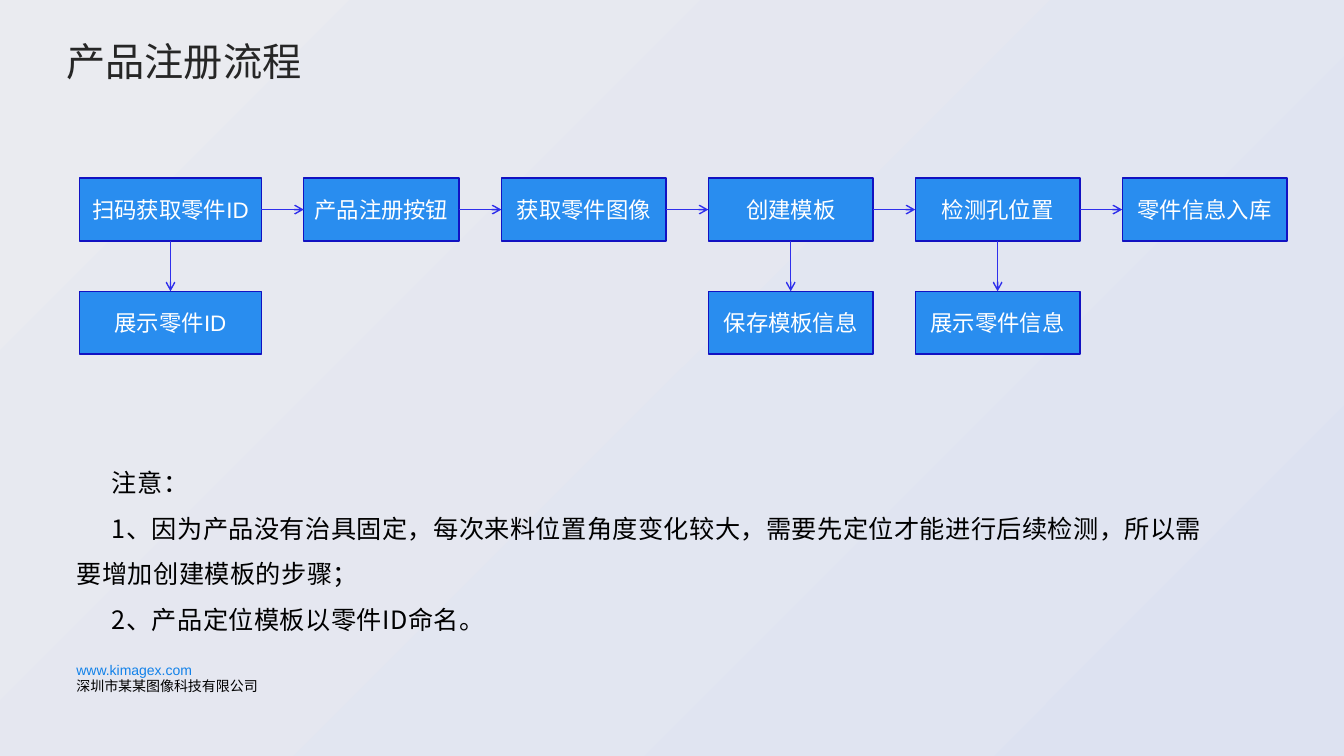
from lxml import etree
from pptx import Presentation
from pptx.dml.color import RGBColor
from pptx.enum import shapes, text
from pptx.oxml.ns import qn
from pptx.util import Pt

BG_START = RGBColor(0xEA, 0xEB, 0xF0)
BG_END = RGBColor(0xDD, 0xE2, 0xF1)
TITLE = RGBColor(0x26, 0x26, 0x26)
BLACK = RGBColor(0, 0, 0)
WHITE = RGBColor(0xFF, 0xFF, 0xFF)
LINK = RGBColor(0x11, 0x81, 0xE9)
BOX_FILL = RGBColor(0x29, 0x8D, 0xEF)
BOX_LINE = RGBColor(0x12, 0x12, 0xC2)
ARROW = RGBColor(0x2F, 0x2F, 0xEC)
CJK = "Noto Sans CJK SC"

STEPS = [
    ("扫码获取零件ID", 130, "展示零件ID"),
    ("产品注册按钮", 111, None),
    ("获取零件图像", 117.6, None),
    ("创建模板", 117.6, "保存模板信息"),
    ("检测孔位置", 117.6, "展示零件信息"),
    ("零件信息入库", 117.6, None),
]
NOTES = [
    "注意：",
    "1、因为产品没有治具固定，每次来料位置角度变化较大，需要先定位才能进行后续检测，所以需要增加创建模板的步骤；",
    "2、产品定位模板以零件ID命名。",
]


def set_font(p, size, color, name="Arial"):
    p.font.name = name
    p.font.size = Pt(size)
    p.font.color.rgb = color
    props = p._p.pPr.find(qn("a:defRPr"))
    etree.SubElement(props, qn("a:ea")).set("typeface", CJK)
    return props


def place(sp, x, y, w, h):
    sp.left, sp.top, sp.width, sp.height = Pt(x), Pt(y), Pt(w), Pt(h)


def add_background(s):
    fill = s.background.fill
    fill.gradient()
    fill.gradient_angle = 315
    for stop, color, position in zip(fill.gradient_stops, (BG_START, BG_END), (0, 1)):
        stop.color.rgb = color
        stop.position = position


def add_title(s, x, y, w, h):
    sp = s.shapes.title
    place(sp, x, y, w, h)
    tf = sp.text_frame
    tf.text = "产品注册流程"
    tf.margin_left = tf.margin_right = tf.margin_top = tf.margin_bottom = 0
    tf.auto_size = text.MSO_AUTO_SIZE.NONE
    tf.word_wrap = False
    tf.vertical_anchor = text.MSO_ANCHOR.MIDDLE
    p = tf.paragraphs[0]
    p.alignment = text.PP_ALIGN.LEFT
    set_font(p, 28, TITLE, CJK)


def add_notes(s, x, y, w, h):
    sp = s.placeholders[1]
    place(sp, x, y, w, h)
    tf = sp.text_frame
    tf.text = "\n".join(NOTES)
    tf.auto_size = text.MSO_AUTO_SIZE.NONE
    for p in tf.paragraphs:
        props = p._p.get_or_add_pPr()
        props.set("marL", "0")
        props.set("indent", str(Pt(25.2)))
        etree.SubElement(props, qn("a:buNone"))
        p.line_spacing = 1.5
        p.space_before = Pt(0)
        set_font(p, 18, BLACK, CJK).set("spc", "30")


def add_footer(s, x, y, w, h):
    tf = s.shapes.add_textbox(Pt(x), Pt(y), Pt(w), Pt(h)).text_frame
    tf.word_wrap = True
    tf.text = "www.kimagex.com\n深圳市某某图像科技有限公司"
    for p, color in zip(tf.paragraphs, (LINK, BLACK)):
        set_font(p, 10, color)


def add_box(s, label, x, y, w, h):
    sp = s.shapes.add_shape(shapes.MSO_SHAPE.RECTANGLE, Pt(x), Pt(y), Pt(w), Pt(h))
    sp.shadow.inherit = False
    sp.fill.solid()
    sp.fill.fore_color.rgb = BOX_FILL
    sp.line.color.rgb = BOX_LINE
    sp.line.width = Pt(1)
    tf = sp.text_frame
    tf.text = label
    tf.word_wrap = False
    tf.vertical_anchor = text.MSO_ANCHOR.MIDDLE
    p = tf.paragraphs[0]
    p.alignment = text.PP_ALIGN.CENTER
    set_font(p, 16, WHITE)
    return sp


def add_arrow(s, start, start_site, end, end_site):
    c = s.shapes.add_connector(shapes.MSO_CONNECTOR.STRAIGHT, 0, 0, 0, 0)
    c.begin_connect(start, start_site)
    c.end_connect(end, end_site)
    c.line.color.rgb = ARROW
    c.line.width = Pt(1)
    etree.SubElement(c.line._get_or_add_ln(), qn("a:tailEnd")).set("type", "arrow")
    etree.SubElement(c._element.spPr, qn("a:effectLst"))


def add_flow(s, x, y, w, h):
    box_h = 44.8
    gap = (w - sum(step[1] for step in STEPS)) / (len(STEPS) - 1)
    previous = None
    for label, box_w, result in STEPS:
        box = add_box(s, label, x, y, box_w, box_h)
        if previous:
            add_arrow(s, previous, 3, box, 1)
        if result:
            below = add_box(s, result, x, y + h - box_h, box_w, box_h)
            add_arrow(s, box, 2, below, 0)
        previous = box
        x += box_w + gap


def main():
    prs = Presentation()
    prs.slide_width, prs.slide_height = Pt(960), Pt(540)
    s = prs.slides.add_slide(prs.slide_layouts[1])
    add_background(s)
    add_title(s, 47.5, 26.6, 168, 34)
    add_notes(s, 47.5, 319.7, 828.7, 147.6)
    add_footer(s, 47.5, 468.7, 158.4, 31.7)
    add_flow(s, 56.8, 127.3, 862.4, 125.6)
    prs.save("out.pptx")


if __name__ == "__main__":
    main()
